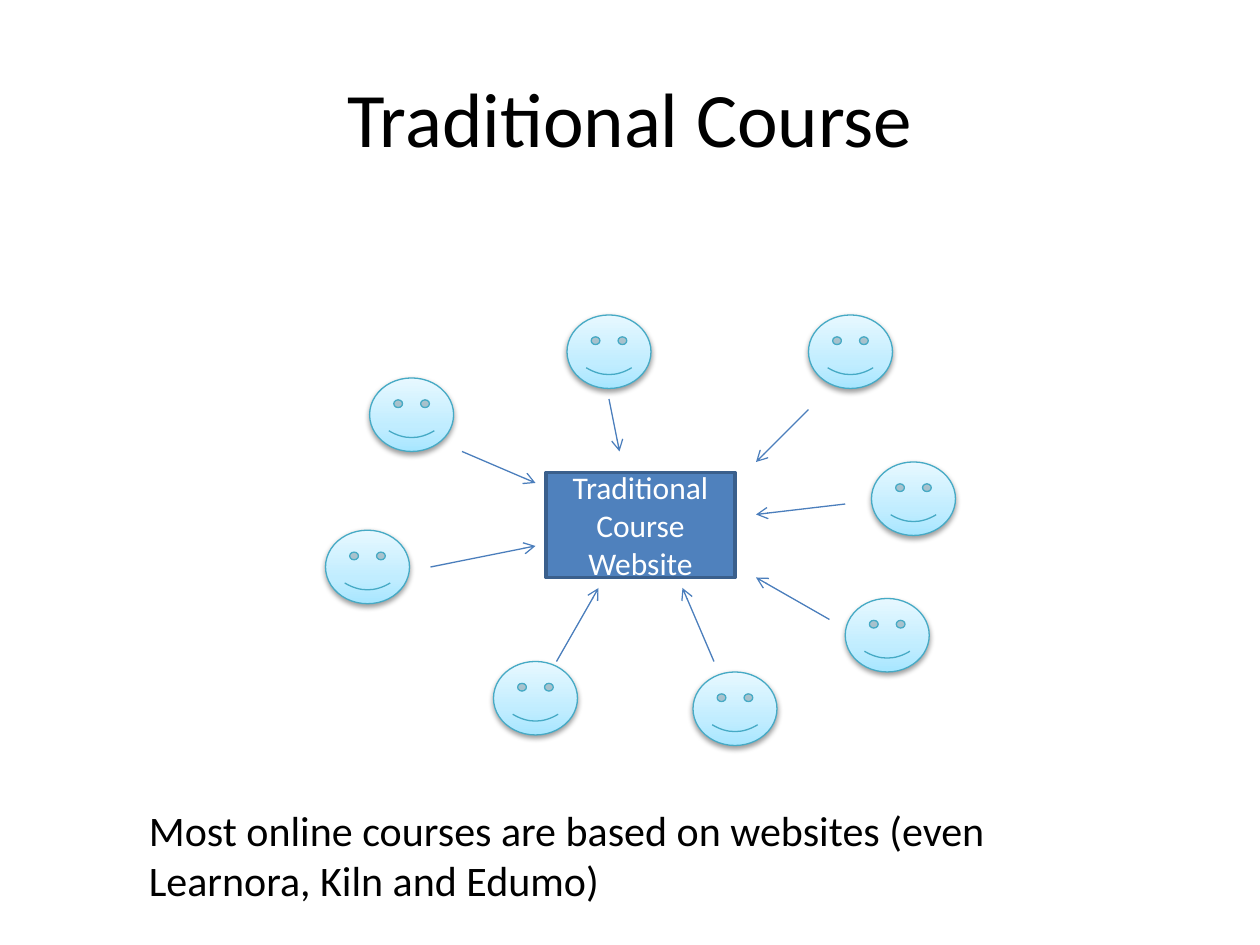
import copy

import lxml.etree
import pptx
import pptx.dml.color
import pptx.enum.shapes
import pptx.enum.text
import pptx.oxml.ns
import pptx.util

BLACK = pptx.dml.color.RGBColor(0x00, 0x00, 0x00)
WHITE = pptx.dml.color.RGBColor(0xFF, 0xFF, 0xFF)
BLUE = pptx.dml.color.RGBColor(0x4F, 0x81, 0xBD)
DARK_BLUE = pptx.dml.color.RGBColor(0x3A, 0x5F, 0x8C)
ARROW_BLUE = pptx.dml.color.RGBColor(0x4B, 0x7E, 0xBC)
TEAL = pptx.dml.color.RGBColor(0x46, 0xAA, 0xC5)
FACE_STOPS = [
    (0, pptx.dml.color.RGBColor(0xA7, 0xE6, 0xFF)),
    (0.35, pptx.dml.color.RGBColor(0xC1, 0xED, 0xFF)),
    (1, pptx.dml.color.RGBColor(0xE7, 0xF8, 0xFF)),
]

COLUMNS, ROWS = 120, 90
FACE_SIZE = (8, 7)
STUDENTS = [
    (83, 44), (80.5, 57), (77, 30), (66, 64),
    (47, 63), (31, 50.5), (35.2, 36), (54, 30),
]
ARROWS = [
    ((77, 39), (72, 44)), ((80.5, 48), (72, 49)),
    ((79, 59), (72, 55)), ((68, 63), (65, 56)),
    ((58, 38), (59, 43)), ((44, 43), (51, 46)),
    ((41, 54), (51, 52)), ((53, 63), (57, 56)),
]


class CourseSlide:
    font = "Calibri"

    def __init__(self, deck):
        self.column = deck.slide_width / COLUMNS
        self.row = deck.slide_height / ROWS
        self.page = deck.slides.add_slide(deck.slide_layouts[5])
        self.shapes = self.page.shapes

    def place(self, column, row):
        return round(column * self.column), round(row * self.row)

    def area(self, column, row, width, height):
        return self.place(column, row) + self.place(width, height)

    def set_text(self, frame, text, size, color, alignment):
        frame.text = text
        frame.word_wrap = True
        for para in frame.paragraphs:
            para.alignment = alignment
            for span in para.runs:
                span.font.name = self.font
                span.font.size = pptx.util.Pt(size)
                span.font.color.rgb = color

    def outline(self, item, color, width):
        item.line.color.rgb = color
        item.line.width = pptx.util.Pt(width)

    def child(self, parent, tag, **attributes):
        return lxml.etree.SubElement(parent, pptx.oxml.ns.qn(tag), attributes)

    def title(self, text, area):
        box = self.shapes.title
        box.left, box.top, box.width, box.height = self.area(*area)
        box.text_frame.vertical_anchor = pptx.enum.text.MSO_ANCHOR.MIDDLE
        self.set_text(box.text_frame, text, 44, BLACK, pptx.enum.text.PP_ALIGN.CENTER)

    def website(self, text, area):
        box = self.shapes.add_shape(
            pptx.enum.shapes.MSO_SHAPE.RECTANGLE, *self.area(*area))
        box.shadow.inherit = False
        box.fill.solid()
        box.fill.fore_color.rgb = BLUE
        self.outline(box, DARK_BLUE, 2)
        box.text_frame.vertical_anchor = pptx.enum.text.MSO_ANCHOR.MIDDLE
        self.set_text(box.text_frame, text, 18, WHITE, pptx.enum.text.PP_ALIGN.CENTER)

    def student(self, column, row):
        face = self.shapes.add_shape(
            pptx.enum.shapes.MSO_SHAPE.SMILEY_FACE,
            *self.area(column, row, *FACE_SIZE))
        face.fill.gradient()
        face.fill.gradient_angle = 90
        stops = face._element.spPr.find(".//" + pptx.oxml.ns.qn("a:gsLst"))
        stops.append(copy.deepcopy(stops[0]))
        for stop, (position, color) in zip(face.fill.gradient_stops, FACE_STOPS):
            stop.position = position
            stop.color.rgb = color
        self.outline(face, TEAL, 0.75)
        face.shadow.inherit = False
        effects = face._element.spPr.find(pptx.oxml.ns.qn("a:effectLst"))
        shadow = self.child(
            effects, "a:outerShdw", blurRad="40000", dist="20000",
            dir="5400000", rotWithShape="0")
        shade = self.child(shadow, "a:srgbClr", val=str(BLACK))
        self.child(shade, "a:alpha", val="38000")

    def arrow(self, start, end):
        line = self.shapes.add_connector(
            pptx.enum.shapes.MSO_CONNECTOR.STRAIGHT,
            *self.place(*start), *self.place(*end))
        self.outline(line, ARROW_BLUE, 0.75)
        properties = line._element.spPr
        self.child(properties.find(pptx.oxml.ns.qn("a:ln")), "a:tailEnd", type="arrow")
        self.child(properties, "a:effectLst")

    def caption(self, text, area):
        box = self.shapes.add_textbox(*self.area(*area))
        self.set_text(box.text_frame, text, 24, BLACK, pptx.enum.text.PP_ALIGN.LEFT)
        box.text_frame.auto_size = pptx.enum.text.MSO_AUTO_SIZE.SHAPE_TO_FIT_TEXT


def main():
    deck = pptx.Presentation()
    deck.slide_width = pptx.util.Inches(10)
    deck.slide_height = pptx.util.Inches(7.5)
    slide = CourseSlide(deck)
    slide.title("Traditional Course", (6, 3.6, 108, 15))
    slide.website("Traditional\nCourse\nWebsite", (52, 45, 18, 10))
    for column, row in STUDENTS:
        slide.student(column, row)
    for start, end in ARROWS:
        slide.arrow(start, end)
    slide.caption(
        "Most online courses are based on websites (even Learnora, Kiln and Edumo)",
        (13, 76, 97, 10.9))
    deck.save("out.pptx")


if __name__ == "__main__":
    main()
